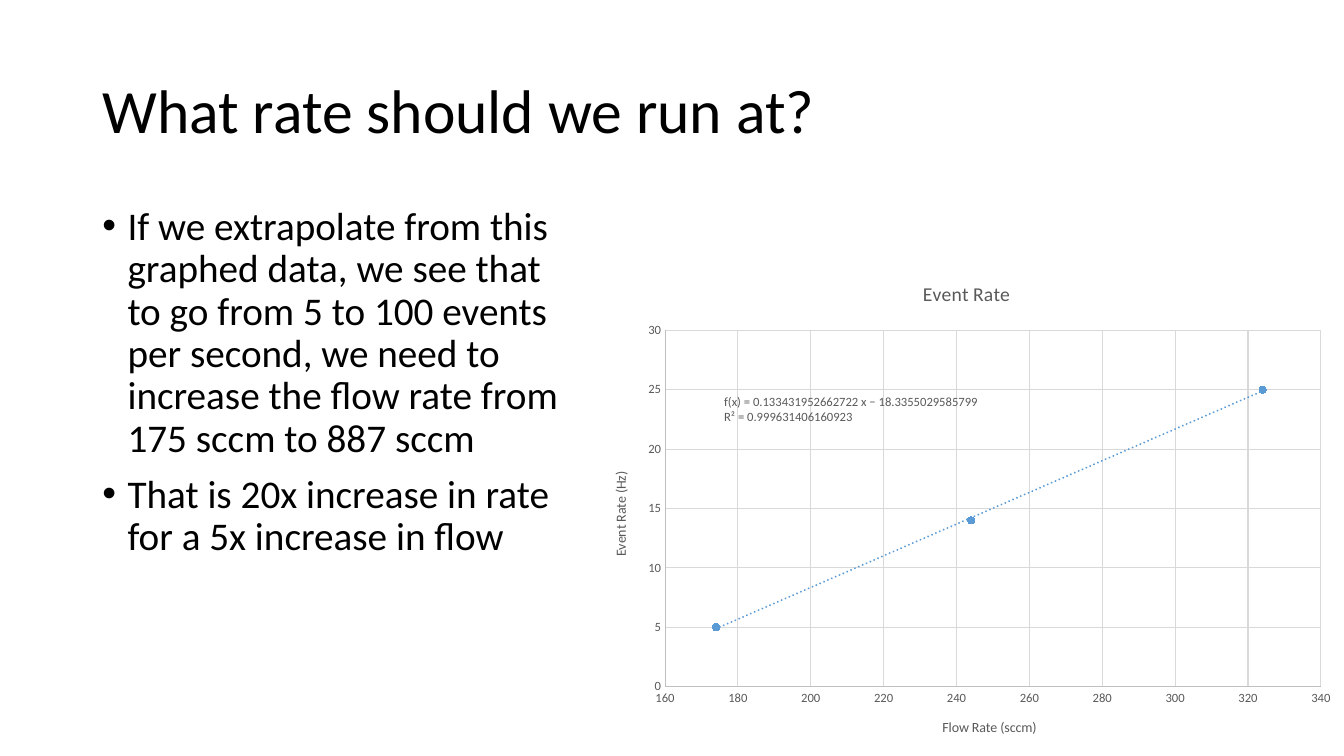
from lxml import etree
from pptx import Presentation
from pptx.chart.data import XyChartData
from pptx.dml.color import RGBColor
from pptx.enum.chart import XL_CHART_TYPE, XL_MARKER_STYLE, XL_TICK_MARK
from pptx.enum.text import MSO_ANCHOR
from pptx.oxml import parse_xml
from pptx.oxml.ns import nsdecls, qn
from pptx.util import Cm, Pt

FONT = "Calibri"
BLACK, GREY, BLUE = "000000", "595959", "5B9BD5"
AXIS_LINE, GRID_LINE = "BFBFBF", "D9D9D9"

POINTS = [(174, 5), (244, 14), (324, 25)]
BULLETS = [
    "If we extrapolate from this graphed data, we see that to go from 5 to 100 "
    "events per second, we need to increase the flow rate from 175 sccm to 887 sccm",
    "That is 20x increase in rate for a 5x increase in flow",
]
FIT = ["f(x) = 0.133431952662722 x − 18.3355029585799", "R² = 0.999631406160923"]


def colour(code):
    return RGBColor.from_string(code)


def style_font(font, size, code):
    font.name = FONT
    font.size = Pt(size)
    font.bold = False
    font.color.rgb = colour(code)


def style_line(line, code):
    line.width = Pt(0.75)
    line.color.rgb = colour(code)


def add_bullet(para):
    properties = para._p.get_or_add_pPr()
    properties.set("marL", str(Cm(0.635)))
    properties.set("indent", str(-Cm(0.635)))
    etree.SubElement(properties, qn("a:buFont")).set("typeface", "Arial")
    etree.SubElement(properties, qn("a:buChar")).set("char", "•")


def add_text(page, place, lines, size, code=BLACK, spacing=0.9,
             anchor=MSO_ANCHOR.TOP, bulleted=False):
    box = page.shapes.add_textbox(*map(Cm, place))
    frame = box.text_frame
    frame.word_wrap = True
    frame.vertical_anchor = anchor
    frame.text = "\n".join(lines)
    for index, para in enumerate(frame.paragraphs):
        para.line_spacing = spacing
        if bulleted:
            if index:
                para.space_before = Pt(10)
            add_bullet(para)
        for span in para.runs:
            style_font(span.font, size, code)


def set_title(owner, text, size):
    frame = owner.text_frame
    frame.text = text
    style_font(frame.paragraphs[0].runs[0].font, size, GREY)


def style_axis(axis, title, low, high, step):
    axis.minimum_scale, axis.maximum_scale, axis.major_unit = low, high, step
    axis.major_tick_mark = axis.minor_tick_mark = XL_TICK_MARK.NONE
    axis.has_major_gridlines = True
    style_line(axis.major_gridlines.format.line, GRID_LINE)
    style_line(axis.format.line, AXIS_LINE)
    style_font(axis.tick_labels.font, 9, GREY)
    set_title(axis.axis_title, title, 10)


def add_trend_line(series):
    trend = parse_xml(f"""
        <c:trendline {nsdecls("c", "a")}>
          <c:spPr><a:ln w="19050" cap="rnd">
            <a:solidFill><a:srgbClr val="{BLUE}"/></a:solidFill>
            <a:prstDash val="sysDot"/></a:ln></c:spPr>
          <c:trendlineType val="linear"/>
          <c:dispRSqr val="0"/><c:dispEq val="0"/>
        </c:trendline>""")
    series._element.find(qn("c:xVal")).addprevious(trend)


def place_plot_area(chart, left, top, width, height):
    area = chart._chartSpace.chart.plotArea
    for old in area.findall(qn("c:layout")):
        area.remove(old)
    area.insert(0, parse_xml(f"""
        <c:layout {nsdecls("c")}><c:manualLayout>
          <c:layoutTarget val="inner"/>
          <c:xMode val="edge"/><c:yMode val="edge"/>
          <c:x val="{left}"/><c:y val="{top}"/>
          <c:w val="{width}"/><c:h val="{height}"/>
        </c:manualLayout></c:layout>"""))


def add_rate_chart(page, place):
    data = XyChartData()
    rates = data.add_series("Event Rate")
    for flow, rate in POINTS:
        rates.add_data_point(flow, rate)
    chart = page.shapes.add_chart(
        XL_CHART_TYPE.XY_SCATTER, *map(Cm, place), data).chart
    style_font(chart.font, 10, BLACK)
    chart.has_legend = False
    set_title(chart.chart_title, "Event Rate", 14)
    style_axis(chart.category_axis, "Flow Rate (sccm)", 160, 340, 20)
    style_axis(chart.value_axis, "Event Rate (Hz)", 0, 30, 5)
    place_plot_area(chart, 0.1, 0.14, 0.87, 0.72)

    # Markers without a joining line
    plot = chart.plots[0]
    plot.vary_by_categories = False
    series = plot.series[0]
    series.format.line.fill.background()
    series.marker.style = XL_MARKER_STYLE.CIRCLE
    series.marker.size = 5
    series.marker.format.fill.solid()
    series.marker.format.fill.fore_color.rgb = colour(BLUE)
    style_line(series.marker.format.line, BLUE)
    add_trend_line(series)


def main():
    deck = Presentation()
    deck.slide_width, deck.slide_height = Cm(33.87), Cm(19.05)
    page = deck.slides.add_slide(deck.slide_layouts[6])

    # Heading
    add_text(page, (2.33, 1.02, 29.21, 3.68), ["What rate should we run at?"], 44,
             anchor=MSO_ANCHOR.MIDDLE)
    # Conclusions
    add_text(page, (2.33, 5.08, 12.32, 12.09), BULLETS, 28, bulleted=True)
    # Measured rates with linear fit and its formula
    add_rate_chart(page, (14.86, 6.58, 19, 12.47))
    add_text(page, (18, 9.8, 8, 1.1), FIT, 9, code=GREY, spacing=1.0)

    deck.save("out.pptx")


if __name__ == "__main__":
    main()
